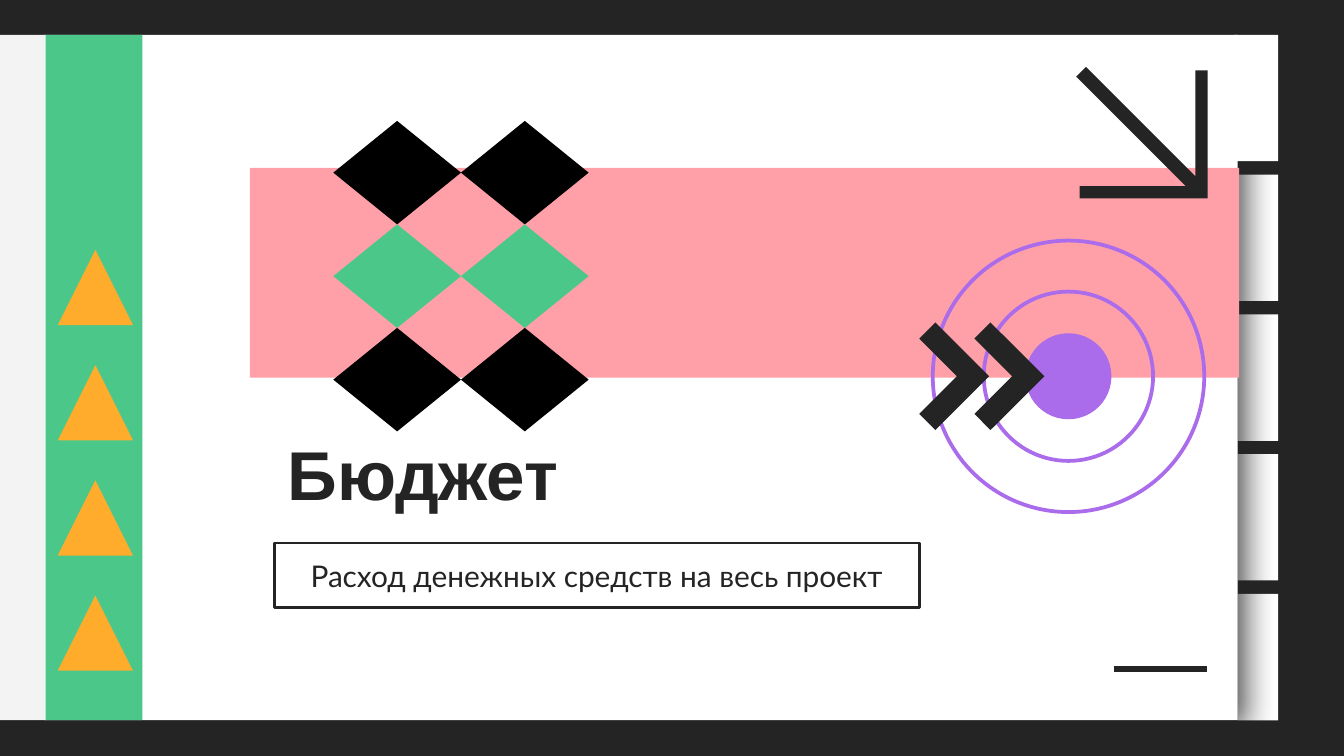
from dataclasses import dataclass

from lxml import etree
from pptx import Presentation
from pptx.dml.color import RGBColor
from pptx.enum.shapes import MSO_CONNECTOR, MSO_SHAPE
from pptx.enum.text import MSO_ANCHOR, PP_ALIGN
from pptx.oxml.ns import qn
from pptx.util import Inches, Pt

RECT, OVAL = MSO_SHAPE.RECTANGLE, MSO_SHAPE.OVAL
TRI, GEM = MSO_SHAPE.ISOSCELES_TRIANGLE, MSO_SHAPE.DIAMOND
LINE = MSO_CONNECTOR.STRAIGHT
MIDDLE = MSO_ANCHOR.MIDDLE
LEFT, CENTER = PP_ALIGN.LEFT, PP_ALIGN.CENTER


@dataclass(frozen=True)
class Theme:
    dark: str = "242424"
    white: str = "FFFFFF"
    grey: str = "F3F3F3"
    black: str = "000000"
    pink: str = "FFA0A9"
    green: str = "4CC78A"
    amber: str = "FFAC2C"
    violet: str = "AA6CEB"
    title_font: str = "Arial"
    body_font: str = "Lato"
    title_size: int = 37
    body_size: int = 16


THEME = Theme()


def paint(shape, fill=None, line=None, weight=1):
    shape.shadow.inherit = False
    if fill:
        shape.fill.solid()
        shape.fill.fore_color.rgb = RGBColor.from_string(fill)
    else:
        shape.fill.background()
    if line:
        shape.line.color.rgb = RGBColor.from_string(line)
        shape.line.width = Pt(weight)
    else:
        shape.line.fill.background()
    return shape


def add_block(slide, kind, left, top, width, height, fill=None, line=None, weight=1):
    box = [Inches(v) for v in (left, top, width, height)]
    return paint(slide.shapes.add_shape(kind, *box), fill, line, weight)


def add_circle(slide, x, y, radius, **style):
    return add_block(slide, OVAL, x - radius, y - radius, 2 * radius, 2 * radius, **style)


def add_path(slide, points, fill, line=None, weight=1):
    points = [(Inches(x), Inches(y)) for x, y in points]
    path = slide.shapes.build_freeform(*points[0])
    path.add_line_segments(points[1:], close=True)
    return paint(path.convert_to_shape(), fill, line, weight)


def add_rule(slide, x1, y1, x2, y2, color, weight):
    ends = [Inches(v) for v in (x1, y1, x2, y2)]
    rule = slide.shapes.add_connector(LINE, *ends)
    rule.line.color.rgb = RGBColor.from_string(color)
    rule.line.width = Pt(weight)
    etree.SubElement(rule._element.spPr, qn("a:effectLst"))


def cast_shadow(shape, color, alpha, blur, dist, angle):
    effects = shape._element.spPr.find(qn("a:effectLst"))
    outer = etree.SubElement(
        effects, qn("a:outerShdw"), blurRad=str(Pt(blur)), dist=str(Pt(dist)),
        dir=str(angle * 60000), algn="bl", rotWithShape="0")
    tint = etree.SubElement(outer, qn("a:srgbClr"), val=color)
    etree.SubElement(tint, qn("a:alpha"), val=str(alpha * 1000))


def set_text(shape, text, font, size, align, bold=False, spacing=1.0):
    frame = shape.text_frame
    frame.word_wrap = True
    frame.vertical_anchor = MIDDLE
    frame.margin_left = frame.margin_right = Inches(0.1)
    frame.margin_top = frame.margin_bottom = Inches(0.1)
    frame.text = text
    para = frame.paragraphs[0]
    para.alignment = align
    para.line_spacing = spacing
    style = para.runs[0].font
    style.name, style.size, style.bold = font, Pt(size), bold
    style.color.rgb = RGBColor.from_string(THEME.dark)


def add_page(slide):
    # Index tabs, the shaded page over them, then the open tab
    for row in range(1, 5):
        add_block(slide, RECT, 9.21, 0.26 + 1.04 * row, 0.3, 0.94, THEME.white)
    page = add_block(slide, RECT, 0.33, 0.26, 8.88, 5.1, THEME.white)
    cast_shadow(page, THEME.dark, 81, 16.9, 6.8, 47)
    add_block(slide, RECT, 9.18, 0.26, 0.33, 0.94, THEME.white)
    add_block(slide, RECT, 0, 0.26, 0.34, 5.1, THEME.grey)
    add_block(slide, RECT, 1.86, 1.25, 7.36, 1.56, THEME.pink)


def add_words(slide):
    box = [Inches(v) for v in (2.04, 3.1, 4.19, 0.92)]
    title = slide.shapes.add_textbox(*box)
    set_text(title, "Бюджет", THEME.title_font, THEME.title_size, LEFT, True, 0.9)
    label = add_block(slide, RECT, 2.04, 4.04, 4.8, 0.48, line=THEME.dark, weight=1.5)
    set_text(label, "Расход денежных средств на весь проект",
             THEME.body_font, THEME.body_size, CENTER)


def add_strip(slide):
    add_block(slide, RECT, 0.34, 0.26, 0.72, 5.1, THEME.green)
    for row in range(4):
        add_block(slide, TRI, 0.43, 1.86 + 0.857 * row, 0.56, 0.56, THEME.amber)


def add_arrow(slide):
    points = [(8.97, 0.54), (8.91, 0.54), (8.91, 1.35), (8.08, 0.52), (8.03, 0.57),
              (8.86, 1.4), (8.05, 1.4), (8.05, 1.46), (8.97, 1.46)]
    arrow = add_path(slide, points, THEME.dark, THEME.dark, 2.25)
    # Sharp corners
    edge = arrow._element.spPr.find(qn("a:ln"))
    etree.SubElement(edge, qn("a:miter"), lim="800000")


def add_target(slide):
    x, y = 7.95, 2.8
    for radius in (1.01, 0.63):
        add_circle(slide, x, y, radius, line=THEME.violet, weight=2)
    add_circle(slide, x, y, 0.32, fill=THEME.violet)
    # Double chevron
    mark = [(0, -0.28), (0.12, -0.4), (0.52, 0), (0.12, 0.4), (0, 0.28), (0.28, 0)]
    for left in (6.84, 7.25):
        add_path(slide, [(left + dx, y + dy) for dx, dy in mark], THEME.dark)


def add_gems(slide):
    wide, high = 0.95, 0.77
    for row, color in enumerate((THEME.black, THEME.green, THEME.black)):
        for col in range(2):
            add_block(slide, GEM, 2.48 + wide * col, 0.9 + high * row, wide, high, color)


def main():
    deck = Presentation()
    # Widescreen, 16:9
    deck.slide_width = Inches(10)
    deck.slide_height = Inches(10 * 9 / 16)
    slide = deck.slides.add_slide(deck.slide_layouts[6])
    back = slide.background.fill
    back.solid()
    back.fore_color.rgb = RGBColor.from_string(THEME.dark)

    add_page(slide)
    add_words(slide)
    add_strip(slide)
    add_arrow(slide)
    add_target(slide)
    add_rule(slide, 8.29, 4.98, 8.98, 4.98, THEME.dark, 3)
    add_gems(slide)
    deck.save("out.pptx")


if __name__ == "__main__":
    main()
